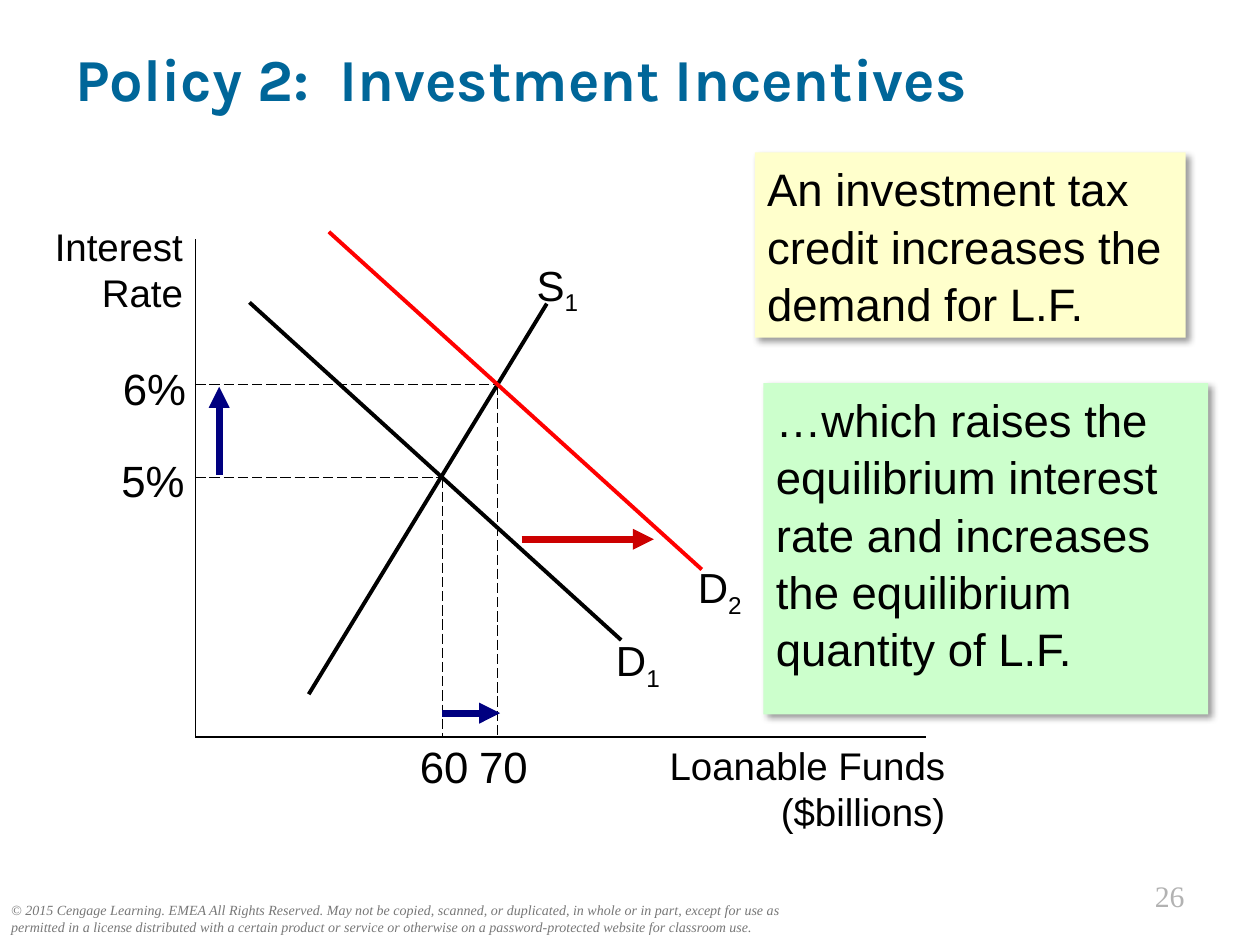
from lxml import etree
from pptx import Presentation
from pptx.dml.color import RGBColor
from pptx.enum.dml import MSO_LINE
from pptx.enum.shapes import MSO_CONNECTOR, MSO_SHAPE
from pptx.enum.text import MSO_ANCHOR, PP_ALIGN
from pptx.oxml import parse_xml
from pptx.oxml.ns import nsdecls, qn
from pptx.util import Inches, Pt

LEFT, CENTER, RIGHT = PP_ALIGN.LEFT, PP_ALIGN.CENTER, PP_ALIGN.RIGHT
TOP, MIDDLE = MSO_ANCHOR.TOP, MSO_ANCHOR.MIDDLE
STRAIGHT, RECTANGLE = MSO_CONNECTOR.STRAIGHT, MSO_SHAPE.RECTANGLE
LONG_DASH = MSO_LINE.LONG_DASH

BLACK, RED, DARK_RED, NAVY = "000000", "FF0000", "CC0000", "000080"
SERIF = "Times New Roman"


def rgb(value):
    return RGBColor.from_string(value)


def write_text(box, text, size=24, font="Arial", color=BLACK, bold=False,
               italic=False, align=LEFT, anchor=TOP, side_inset=0.1,
               line_spacing=None, subscript=""):
    frame = box.text_frame
    frame.word_wrap = True
    frame.vertical_anchor = anchor
    frame.margin_left = frame.margin_right = Inches(side_inset)
    para = frame.paragraphs[0]
    para.text = text
    para.alignment = align
    if line_spacing:
        para.line_spacing = line_spacing
    if subscript:
        span = para.add_run()
        span.text = subscript
        span.font._element.set("baseline", "-25000")
    for span in para.runs:
        span.font.size = Pt(size)
        span.font.name = font
        span.font.bold = bold
        span.font.italic = italic
        span.font.color.rgb = rgb(color)


class SlideBuilder:
    def __init__(self, page):
        self.shapes = page.shapes

    def text(self, left, top, width, height, text, **style):
        box = self.shapes.add_textbox(
            Inches(left), Inches(top), Inches(width), Inches(height))
        write_text(box, text, **style)

    def line(self, start, end, color=BLACK, width=0.75, dash=None, arrow=False):
        line = self.shapes.add_connector(
            STRAIGHT, *(Inches(value) for value in (*start, *end)))
        line.line.color.rgb = rgb(color)
        line.line.width = Pt(width)
        if dash:
            line.line.dash_style = dash
        if arrow:
            outline = line.line._get_or_add_ln()
            etree.SubElement(outline, qn("a:tailEnd"), type="triangle")
        etree.SubElement(line._element.spPr, qn("a:effectLst"))

    def curve(self, start, end, color=BLACK):
        self.line(start, end, color, width=2.25)

    def guide(self, start, end):
        self.line(start, end, dash=LONG_DASH)

    def arrow(self, start, end, color=NAVY):
        self.line(start, end, color, width=4, arrow=True)

    def value(self, left, top, text):
        self.text(left, top, 0.67, 0.52, text, size=25, align=CENTER,
                  side_inset=0)

    def curve_label(self, left, top, letter, number):
        self.text(left, top, 0.61, 0.5, letter, subscript=number)

    def note(self, left, top, width, height, fill, text):
        box = self.shapes.add_shape(
            RECTANGLE, Inches(left), Inches(top), Inches(width), Inches(height))
        box.fill.solid()
        box.fill.fore_color.rgb = rgb(fill)
        box.line.fill.background()
        box.shadow.inherit = False
        effects = box._element.spPr.find(qn("a:effectLst"))
        effects.append(parse_xml(
            f'<a:outerShdw {nsdecls("a")} blurRad="{Pt(4)}" dist="{Pt(3)}" '
            'dir="2700000" algn="tl" rotWithShape="0">'
            f'<a:srgbClr val="{BLACK}"><a:alpha val="40000"/></a:srgbClr>'
            '</a:outerShdw>'))
        write_text(box, text, size=26, line_spacing=1.05)


def main():
    deck = Presentation()
    deck.slide_width, deck.slide_height = Inches(10), Inches(7.5)
    builder = SlideBuilder(deck.slides.add_slide(deck.slide_layouts[6]))

    # Footer and title
    builder.text(
        -0.01, 7.11, 6.43, 0.37,
        "© 2015 Cengage Learning. EMEA All Rights Reserved. May not be copied, "
        "scanned, or duplicated, in whole or in part, except for use as "
        "permitted in a license distributed with a certain product or service "
        "or otherwise on a password-protected website for classroom use.",
        size=8, font=SERIF, color="777777", italic=True)
    builder.text(8.25, 6.92, 1.25, 0.38, "26", size=17, font=SERIF,
                 color="B2B2B2", align=RIGHT)
    builder.text(0.5, 0.24, 9, 0.76, "Policy 2:  Investment Incentives",
                 size=34, font="Karla", color="006699", bold=True,
                 anchor=MIDDLE)

    # Axes
    axis_x, axis_y = 1.55, 5.85
    builder.line((axis_x, 1.9), (axis_x, axis_y))
    builder.line((axis_x, axis_y), (7.35, axis_y))
    builder.text(0.04, 1.72, 1.51, 0.83, "Interest\vRate", size=22, align=RIGHT)
    builder.text(4.98, 5.84, 2.62, 0.83, "Loanable Funds ($billions)",
                 size=22, align=RIGHT)

    # Equilibrium guides with their values
    for x, y, rate, rate_spot, quantity, quantity_left in (
            (3.51, 3.79, "5%", (0.88, 3.55), "60", 3.19),
            (3.95, 3.05, "6%", (0.89, 2.82), "70", 3.66)):
        builder.guide((axis_x, y), (x, y))
        builder.guide((x, y), (x, axis_y))
        builder.value(*rate_spot, rate)
        builder.value(quantity_left, 5.82, quantity)

    # Supply and demand curves
    builder.curve((1.98, 2.4), (4.93, 5.08))
    builder.curve_label(4.79, 4.99, "D", "1")
    builder.curve((2.45, 5.51), (4.34, 2.41))
    builder.curve_label(4.16, 2.01, "S", "1")
    builder.curve((2.61, 1.84), (5.57, 4.52), RED)
    builder.curve_label(5.44, 4.41, "D", "2")

    # Shift arrows
    builder.arrow((4.14, 4.28), (5.19, 4.28), DARK_RED)
    builder.arrow((1.74, 3.77), (1.74, 3.07))
    builder.arrow((3.51, 5.66), (3.97, 5.66))

    # Explanations
    builder.note(5.99, 1.21, 3.42, 1.47, "FFFFCC",
                 "An investment tax credit increases the demand for L.F.")
    builder.note(6.06, 3.04, 3.53, 2.63, "CCFFCC",
                 "…which raises the equilibrium interest rate and increases "
                 "the equilibrium quantity of L.F.")

    deck.save("out.pptx")


if __name__ == "__main__":
    main()
